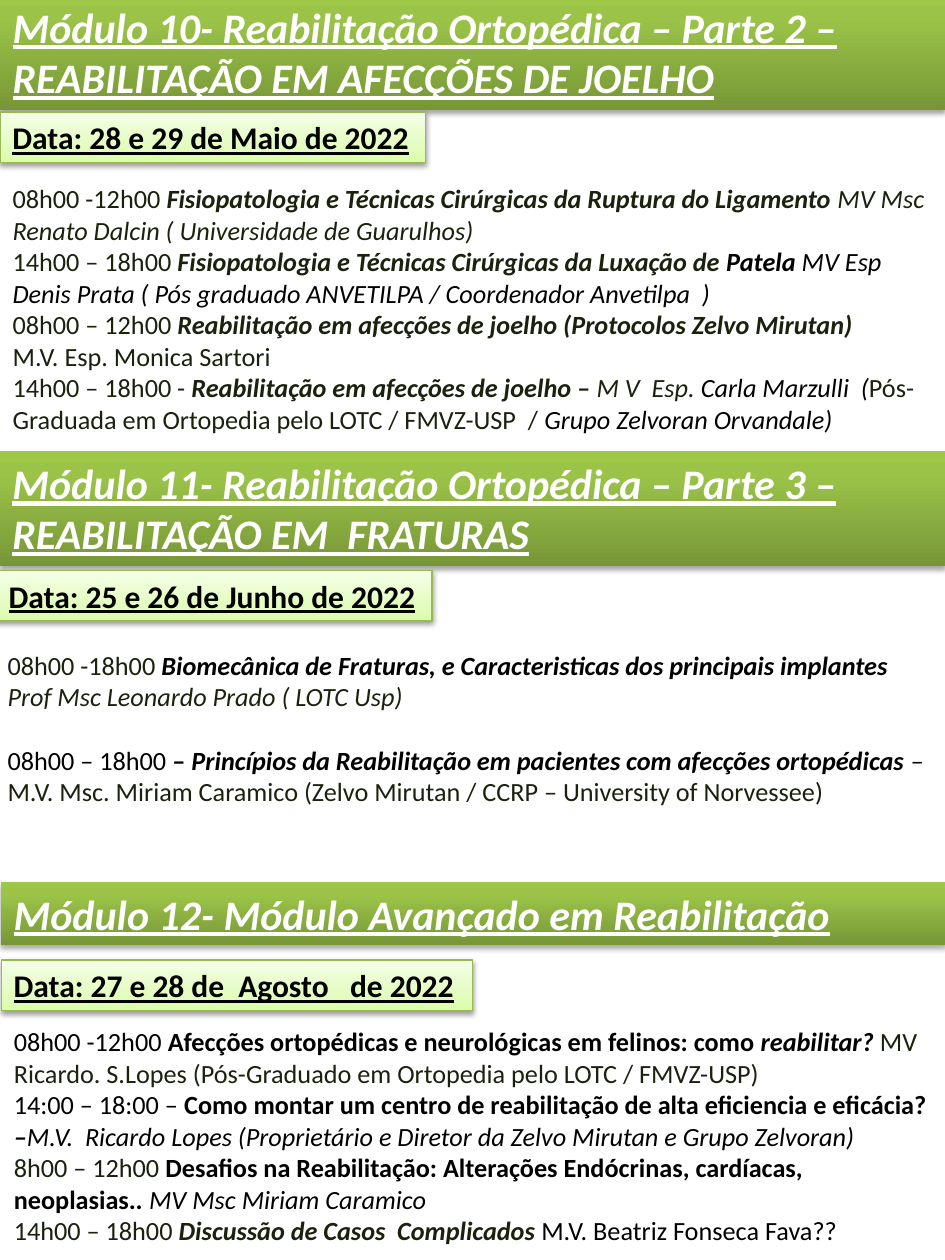
"""Build the course programme slide with modules 10 to 12."""
from dataclasses import dataclass
from typing import NamedTuple

from lxml.etree import SubElement
from pptx import Presentation
from pptx.dml.color import RGBColor
from pptx.enum.shapes import MSO_SHAPE
from pptx.enum.text import MSO_ANCHOR, MSO_AUTO_SIZE, PP_ALIGN
from pptx.oxml.ns import qn
from pptx.util import Inches, Pt

COLORS = {"white": "FFFFFF", "black": "000000", "olive": "1A210D", "border": "98B955"}
BANNER_STOPS = [(0, "779737"), (80, "9BC348"), (100, "9DC746")]
DATE_STOPS = [(0, "DAFDA7"), (35, "E4FCC2"), (100, "F5FFE7")]
LINE_GAP = 18.3


class Piece(NamedTuple):
    text: str
    style: str = ""
    color: str = "olive"


class Box(NamedTuple):
    left: float
    top: float
    width: float
    height: float


@dataclass
class Entry:
    pieces: list[Piece]
    gap: float = 0


@dataclass
class Module:
    title: str
    title_box: Box
    date: str
    date_box: Box
    schedule_box: Box
    entries: list[Entry]


MODULES = [
    Module(
        "Módulo 10- Reabilitação Ortopédica – Parte 2 – REABILITAÇÃO EM AFECÇÕES DE JOELHO",
        Box(0, -0.04, 7.5, 0.91),
        "Data: 28 e 29 de Maio de 2022",
        Box(0, 0.89, 3.38, 0.4),
        Box(0, 1.4, 7.5, 2.12),
        [
            Entry([Piece("08h00 -12h00 "),
                   Piece("Fisiopatologia e Técnicas Cirúrgicas da Ruptura do Ligamento ", "bi"),
                   Piece("MV Msc Renato Dalcin ( Universidade de Guarulhos)", "i")]),
            Entry([Piece("14h00 – 18h00 "),
                   Piece("Fisiopatologia e Técnicas Cirúrgicas da Luxação de ", "bi"),
                   Piece("Patela ", "bi", "black"),
                   Piece("MV Esp Denis Prata ( Pós graduado ANVETILPA / Coordenador Anvetilpa  )",
                         "i", "black")]),
            Entry([Piece("08h00 – 12h00 "),
                   Piece("Reabilitação em afecções de joelho (Protocolos Zelvo Mirutan)", "bi")]),
            Entry([Piece("M.V. Esp. Monica Sartori")]),
            Entry([Piece("14h00 – 18h00 - "),
                   Piece("Reabilitação em afecções de joelho – ", "bi"),
                   Piece("M V  Esp. ", "i"),
                   Piece("Carla Marzulli  (", "i", "black"),
                   Piece("Pós-Graduada em Ortopedia pelo LOTC / FMVZ-USP  / "),
                   Piece("Grupo Zelvoran Orvandale)", "i", "black")]),
        ],
    ),
    Module(
        "Módulo 11- Reabilitação Ortopédica – Parte 3 – REABILITAÇÃO EM  FRATURAS",
        Box(0, 3.58, 7.5, 0.91),
        "Data: 25 e 26 de Junho de 2022",
        Box(-0.03, 4.53, 3.46, 0.4),
        Box(-0.04, 5.1, 7.5, 1.36),
        [
            Entry([Piece("08h00 -18h00 "),
                   Piece("Biomecânica de Fraturas, e Caracteristicas dos principais implantes ",
                         "bi", "black"),
                   Piece("Prof Msc Leonardo Prado ( LOTC Usp)", "i")]),
            Entry([Piece("08h00 – 18h00 ", "", "black"),
                   Piece("– ", "b", "black"),
                   Piece("Princípios da Reabilitação em pacientes com afecções ortopédicas ",
                         "bi", "black"),
                   Piece("–", "i", "black")], LINE_GAP),
            Entry([Piece("M.V. Msc. Miriam Caramico "
                         "(Zelvo Mirutan / CCRP – University of Norvessee)")]),
        ],
    ),
    Module(
        "Módulo 12- Módulo Avançado em Reabilitação",
        Box(0.01, 7, 7.5, 0.5),
        "Data: 27 e 28 de  Agosto   de 2022",
        Box(0.01, 7.62, 3.74, 0.4),
        Box(0.01, 8.09, 7.5, 1.87),
        [
            Entry([Piece("08h00 -12h00 ", "", "black"),
                   Piece("Afecções ortopédicas e neurológicas em felinos: como ", "b", "black"),
                   Piece("reabilitar? ", "bi", "black"),
                   Piece("MV  Ricardo. S.Lopes (Pós-Graduado em Ortopedia pelo LOTC / FMVZ-USP)")]),
            Entry([Piece("14:00 – 18:00 – ", "", "black"),
                   Piece("Como montar um centro de reabilitação de alta eficiencia e eficácia?",
                         "b", "black"),
                   Piece(" –", "bi", "black"),
                   Piece("M.V.  Ricardo Lopes (Proprietário e Diretor da Zelvo Mirutan "
                         "e Grupo Zelvoran)", "i", "black")]),
            Entry([Piece("8h00 – 12h00 "),
                   Piece("Desafios na Reabilitação: Alterações Endócrinas, cardíacas, neoplasias.",
                         "b", "black"),
                   Piece(". ", "bi", "black"),
                   Piece("MV Msc Miriam Caramico", "i", "black")]),
            Entry([Piece("14h00 – 18h00 "),
                   Piece("Discussão de Casos  Complicados ", "bi"),
                   Piece("M.V. Beatriz Fonseca Fava??", "", "black")]),
        ],
    ),
]


def place(shape, box: Box) -> None:
    """Move and size a shape."""
    shape.left, shape.top, shape.width, shape.height = (Inches(value) for value in box)


def paint(shape, stops: list[tuple[int, str]], opacity: int, distance: float) -> None:
    """Give a shape a vertical gradient and a soft shadow below it."""
    shape.fill.gradient()
    shape.fill.gradient_angle = 90
    properties = shape._element.spPr
    stop_list = properties.find(".//" + qn("a:gsLst"))
    for stop in list(stop_list):
        stop_list.remove(stop)
    for position, color in stops:
        stop = SubElement(stop_list, qn("a:gs"), pos=str(position * 1000))
        SubElement(stop, qn("a:srgbClr"), val=color)
    shape.line.fill.background()
    effects = properties.find(qn("a:effectLst"))
    if effects is None:
        effects = SubElement(properties, qn("a:effectLst"))
    shadow = SubElement(effects, qn("a:outerShdw"), blurRad=str(Pt(3.1)),
                        dist=str(Pt(distance)), dir="5400000", rotWithShape="0")
    color = SubElement(shadow, qn("a:srgbClr"), val=COLORS["black"])
    SubElement(color, qn("a:alpha"), val=str(opacity * 1000))


def write(shape, entries: list[Entry], size: int, wrap: bool = True) -> None:
    """Fill a shape with left-aligned paragraphs of formatted runs."""
    frame = shape.text_frame
    frame.word_wrap = wrap
    frame.auto_size = MSO_AUTO_SIZE.SHAPE_TO_FIT_TEXT
    frame.vertical_anchor = MSO_ANCHOR.TOP
    for index, entry in enumerate(entries):
        paragraph = frame.add_paragraph() if index else frame.paragraphs[0]
        paragraph.alignment = PP_ALIGN.LEFT
        paragraph.space_before = Pt(entry.gap)
        properties = paragraph._p.get_or_add_pPr()
        properties.set("marL", "0")
        properties.set("indent", "0")
        SubElement(properties, qn("a:buNone"))
        for piece in entry.pieces:
            run = paragraph.add_run()
            run.text = piece.text
            run.font.name, run.font.size = "Calibri", Pt(size)
            run.font.bold, run.font.italic = "b" in piece.style, "i" in piece.style
            run.font.underline = "u" in piece.style
            run.font.color.rgb = RGBColor.from_string(COLORS[piece.color])


def draw_module(slide, module: Module, banner, schedule) -> None:
    """Draw the banner, date label and schedule of one module."""
    place(banner, module.title_box)
    paint(banner, BANNER_STOPS, 35, 1.8)
    write(banner, [Entry([Piece(module.title, "biu", "white")])], 24)
    label = slide.shapes.add_shape(MSO_SHAPE.RECTANGLE, *map(Inches, module.date_box))
    label.shadow.inherit = False
    paint(label, DATE_STOPS, 38, 1.6)
    label.line.color.rgb = RGBColor.from_string(COLORS["border"])
    label.line.width = Pt(0.75)
    write(label, [Entry([Piece(module.date, "bu", "black")])], 18, wrap=False)
    place(schedule, module.schedule_box)
    write(schedule, module.entries, 15)


def main() -> None:
    """Create and save the presentation."""
    presentation = Presentation()
    presentation.slide_width, presentation.slide_height = Inches(7.5), Inches(10)
    slide = presentation.slides.add_slide(presentation.slide_layouts[4])
    title, *schedules, spare = list(slide.placeholders)
    spare._element.getparent().remove(spare._element)
    for module, schedule in zip(MODULES, schedules):
        banner = title
        if module is not MODULES[0]:
            banner = slide.shapes.add_shape(MSO_SHAPE.RECTANGLE, *map(Inches, module.title_box))
            banner.shadow.inherit = False
        draw_module(slide, module, banner, schedule)
    presentation.save("out.pptx")


if __name__ == "__main__":
    main()
